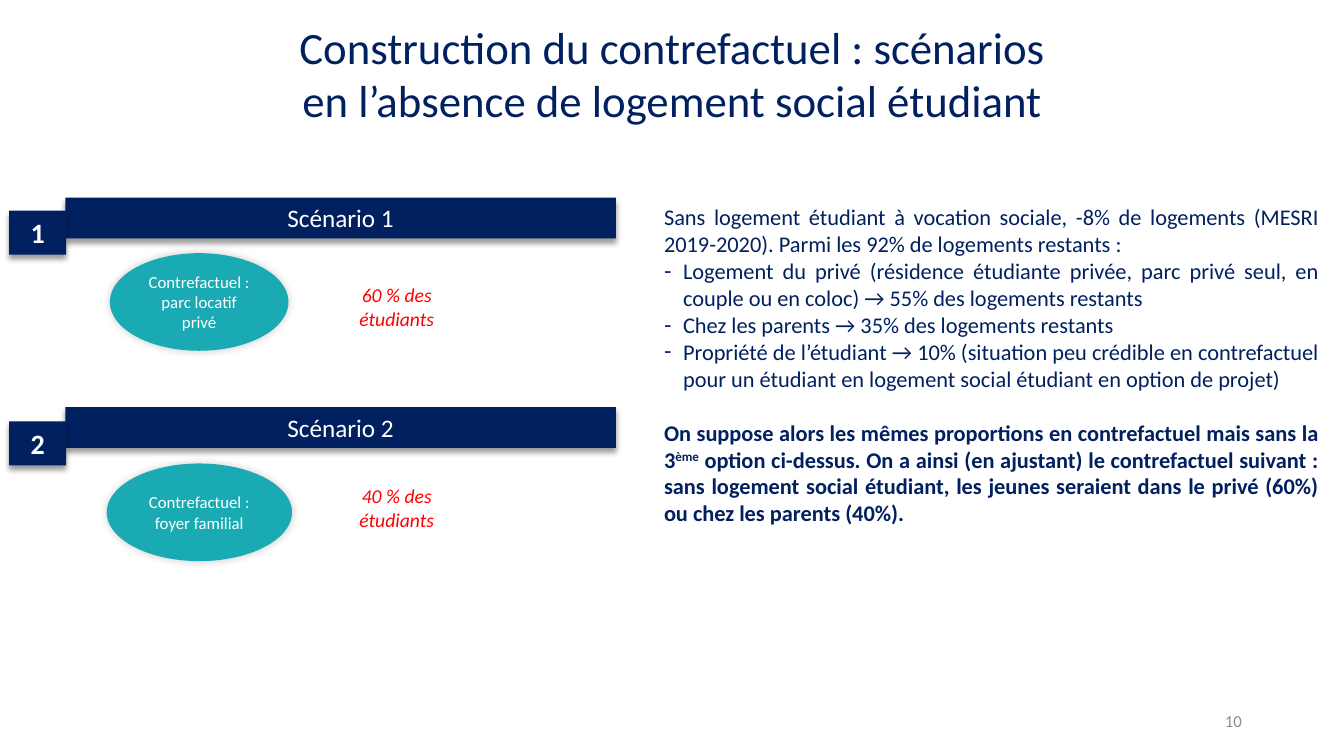
from pptx import Presentation
from pptx.dml.color import RGBColor
from pptx.enum.shapes import MSO_SHAPE as Form
from pptx.enum.text import MSO_ANCHOR as Anchor, MSO_AUTO_SIZE as Fit, PP_ALIGN as Align
from pptx.oxml import parse_xml
from pptx.oxml.ns import nsdecls, qn
from pptx.util import Cm, Pt

NAVY, TEAL, RED, GREY, WHITE = "002060", "19AAB4", "FF0000", "8C8C8C", "FFFFFF"

# Shadow: opacity %, blur pt, distance pt, angle in degrees
DROP = (40, 4, 3, 90)
GLOW = (20, 6, 0, 225)

INTRO = ("Sans logement étudiant à vocation sociale, -8% de logements "
         "(MESRI 2019-2020). Parmi les 92% de logements restants :")
ITEMS = [
    "Logement du privé (résidence étudiante privée, parc privé seul, "
    "en couple ou en coloc) → 55% des logements restants",
    "Chez les parents → 35% des logements restants",
    "Propriété de l’étudiant → 10% (situation peu crédible en contrefactuel "
    "pour un étudiant en logement social étudiant en option de projet)",
]
CLOSE = [
    "On suppose alors les mêmes proportions en contrefactuel mais sans la 3",
    "ème",
    " option ci-dessus. On a ainsi (en ajustant) le contrefactuel suivant : "
    "sans logement social étudiant, les jeunes seraient dans le privé (60%) "
    "ou chez les parents (40%).",
]

# Number, top of banner, tag, oval and note, left and width of oval, texts
CASES = [
    ("1", 4.98, 5.31, 6.38, 7.01, 2.77, 4.5,
     "Contrefactuel : parc locatif privé", "60 % des étudiants"),
    ("2", 10.26, 10.62, 11.68, 12.07, 2.69, 4.67,
     "Contrefactuel : foyer familial", "40 % des étudiants"),
]


def color(code):
    return RGBColor.from_string(code)


def style(para, size, code, align, bold=False, italic=False):
    para.alignment = align
    for run in para.runs:
        font = run.font
        font.name, font.size = "Calibri", Pt(size)
        font.bold, font.italic = bold, italic
        font.color.rgb = color(code)


def place(shape, box):
    shape.left, shape.top, shape.width, shape.height = map(Cm, box)


def write(shape, text, size, code, align=Align.CENTER, anchor=Anchor.TOP, **look):
    frame = shape.text_frame
    frame.word_wrap = True
    frame.auto_size = Fit.NONE
    frame.vertical_anchor = anchor
    frame.text = text
    style(frame.paragraphs[0], size, code, align, **look)


def label(slide, box, *args, **look):
    write(slide.shapes.add_textbox(*map(Cm, box)), *args, **look)


def block(slide, form, box, fill, shade, text, size, **look):
    shape = slide.shapes.add_shape(form, *map(Cm, box))
    shape.fill.solid()
    shape.fill.fore_color.rgb = color(fill)
    shape.line.fill.background()
    shape.shadow.inherit = False
    alpha, blur, dist, angle = shade
    shape._element.spPr.find(qn("a:effectLst")).append(parse_xml(
        f'<a:outerShdw {nsdecls("a")} blurRad="{Pt(blur)}" dist="{Pt(dist)}" '
        f'dir="{angle * 60000}" algn="ctr" rotWithShape="0">'
        f'<a:srgbClr val="000000"><a:alpha val="{alpha * 1000}"/></a:srgbClr>'
        '</a:outerShdw>'))
    write(shape, text, size, WHITE, **look)


def bullet(para, mark=None):
    props = para._p.get_or_add_pPr()
    indent = Cm(0.48) if mark else 0
    props.set("marL", str(indent))
    props.set("indent", str(-indent))
    tag = f'buChar {nsdecls("a")} char="{mark}"' if mark else f'buNone {nsdecls("a")}'
    props.append(parse_xml(f"<a:{tag}/>"))


def body(shape):
    place(shape, (16.48, 5, 17.02, 9.14))
    frame = shape.text_frame
    frame.word_wrap = True
    frame.auto_size = Fit.NONE
    frame.text = "\n".join([INTRO, *ITEMS, ""])
    *plain, last = frame.paragraphs
    for text in CLOSE:
        last.add_run().text = text
    for para in frame.paragraphs:
        bullet(para, "-" if para.text in ITEMS else None)
        para.space_before = Pt(0)
        style(para, 16, NAVY, Align.JUSTIFY, bold=para.text == last.text)
    last.space_before = Pt(19.5)
    last.runs[1]._r.get_or_add_rPr().set("baseline", "30000")


def case(slide, num, bar, tag, oval, note, left, width, text, share):
    block(slide, Form.OVAL, (left, oval, width, 2.46), TEAL, GLOW,
          text, 12, anchor=Anchor.MIDDLE)
    block(slide, Form.RECTANGLE, (1.65, bar, 13.87, 1.03), NAVY, DROP,
          f"Scénario {num}", 18)
    block(slide, Form.RECTANGLE, (0.23, tag, 1.44, 1.11), NAVY, DROP,
          num, 20, bold=True)
    label(slide, (8.59, note, 2.82, 1.45), share, 14, RED, italic=True)


def main():
    prs = Presentation()
    prs.slide_width, prs.slide_height = Cm(33.87), Cm(19.05)
    slide = prs.slides.add_slide(prs.slide_layouts[1])

    # Title and explanation
    title = slide.shapes.title
    place(title, (6.99, 0.36, 19.91, 3))
    write(title, "Construction du contrefactuel : scénarios "
          "en l’absence de logement social étudiant", 32, NAVY)
    body(slide.placeholders[1])

    # Scenarios
    for row in CASES:
        case(slide, *row)

    # Slide number
    label(slide, (23.93, 17.65, 7.62, 1.02), "10", 12, GREY,
          align=Align.RIGHT, anchor=Anchor.MIDDLE)
    prs.save("out.pptx")


if __name__ == "__main__":
    main()
